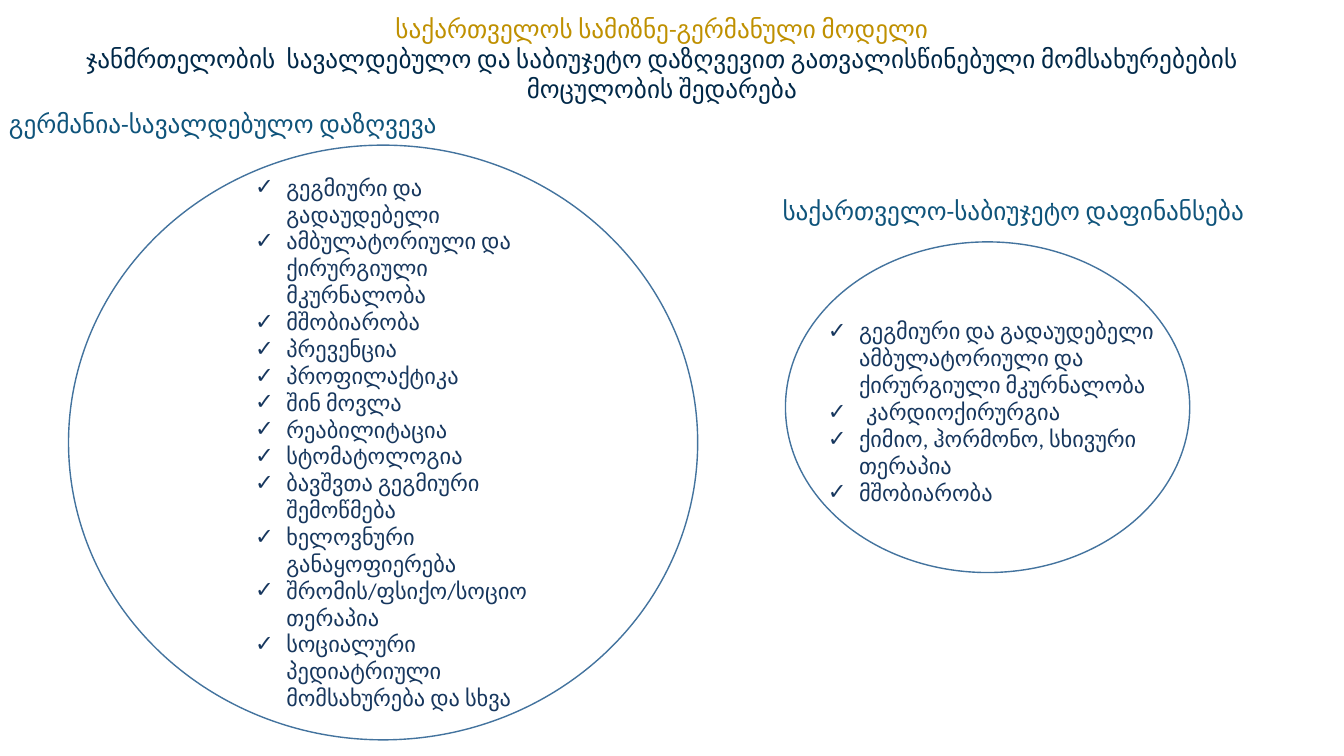
import pptx
import pptx.util
import pptx.dml.color
import pptx.enum.shapes
import pptx.enum.text
import pptx.oxml.ns
import lxml.etree

Inches = pptx.util.Inches
Align = pptx.enum.text.PP_ALIGN
Anchor = pptx.enum.text.MSO_ANCHOR


def paint(target, tint):
    target.rgb = pptx.dml.color.RGBColor.from_string(tint)


def write(holder, box, size, rows, anchor=Anchor.TOP, inset=None):
    holder.left, holder.top, holder.width, holder.height = map(Inches, box)
    frame = holder.text_frame
    frame.word_wrap = True
    frame.auto_size = pptx.enum.text.MSO_AUTO_SIZE.NONE
    frame.vertical_anchor = anchor
    if inset:
        frame.margin_left = frame.margin_right = Inches(inset)
        frame.margin_top = frame.margin_bottom = Inches(inset)
    for n, (text, tint, indent) in enumerate(rows):
        para = frame.add_paragraph() if n else frame.paragraphs[0]
        para.space_before = pptx.util.Pt(0)
        run = para.add_run()
        run.text = text
        run.font.name = "Calibri"
        run.font.size = pptx.util.Pt(size)
        run.font.bold = False
        paint(run.font.color, tint)
        if indent:
            para.alignment = Align.LEFT
            props = para._p.get_or_add_pPr()
            props.set("marL", str(Inches(indent)))
            props.set("indent", str(-Inches(indent)))
            mark = lxml.etree.SubElement(props, pptx.oxml.ns.qn("a:buChar"))
            mark.set("char", "✓")
        else:
            para.alignment = Align.CENTER


GOLD, NAVY, TEAL, INK, BLUE = "BF9000", "002848", "0F547B", "17375E", "43739E"

deck = pptx.Presentation()
deck.slide_width = Inches(13.33)
deck.slide_height = Inches(7.5)
slide = deck.slides.add_slide(deck.slide_layouts.get_by_name("Comparison"))
title, head1, list1, head2, list2 = slide.placeholders

write(title, (0, 0.08, 13.13, 1.01), 18, [
    ("საქართველოს სამიზნე-გერმანული მოდელი", GOLD, 0),
    ("ჯანმრთელობის  სავალდებულო და საბიუჯეტო დაზღვევით "
     "გათვალისწინებული მომსახურებების მოცულობის შედარება", NAVY, 0),
])
write(head1, (-0.36, 1.02, 5.14, 0.4), 18,
      [("გერმანია-სავალდებულო დაზღვევა", TEAL, 0)])
write(head2, (7.48, 1.89, 5.14, 0.4), 18,
      [("საქართველო-საბიუჯეტო დაფინანსება", TEAL, 0)])

german = [
    "გეგმიური და გადაუდებელი",
    "ამბულატორიული და ქირურგიული მკურნალობა",
    "მშობიარობა",
    "პრევენცია",
    "პროფილაქტიკა",
    "შინ მოვლა",
    "რეაბილიტაცია",
    "სტომატოლოგია",
    "ბავშვთა გეგმიური შემოწმება",
    "ხელოვნური განაყოფიერება",
    "შრომის/ფსიქო/სოციო თერაპია",
    "სოციალური პედიატრიული მომსახურება და სხვა",
]
write(list1, (2.41, 1.59, 3.27, 5.6), 16,
      [(text, INK, 0.31) for text in german], Anchor.MIDDLE, 0.12)
write(list2, (8.11, 3.1, 3.69, 2.32), 16, [
    ("გეგმიური და გადაუდებელი ამბულატორიული და ქირურგიული მკურნალობა", INK, 0.31),
    ("კარდიოქირურგია", INK, 0.38),
    ("ქიმიო, ჰორმონო, სხივური თერაპია", INK, 0.31),
    ("მშობიარობა", INK, 0.31),
])

for box in [(0.68, 1.44, 6.24, 5.9), (7.79, 2.4, 4.01, 3.28)]:
    ring = slide.shapes.add_shape(
        pptx.enum.shapes.MSO_SHAPE.OVAL, *map(Inches, box))
    ring.shadow.inherit = False
    ring.fill.background()
    paint(ring.line.color, BLUE)
    ring.line.width = pptx.util.Pt(1)

deck.save("out.pptx")
